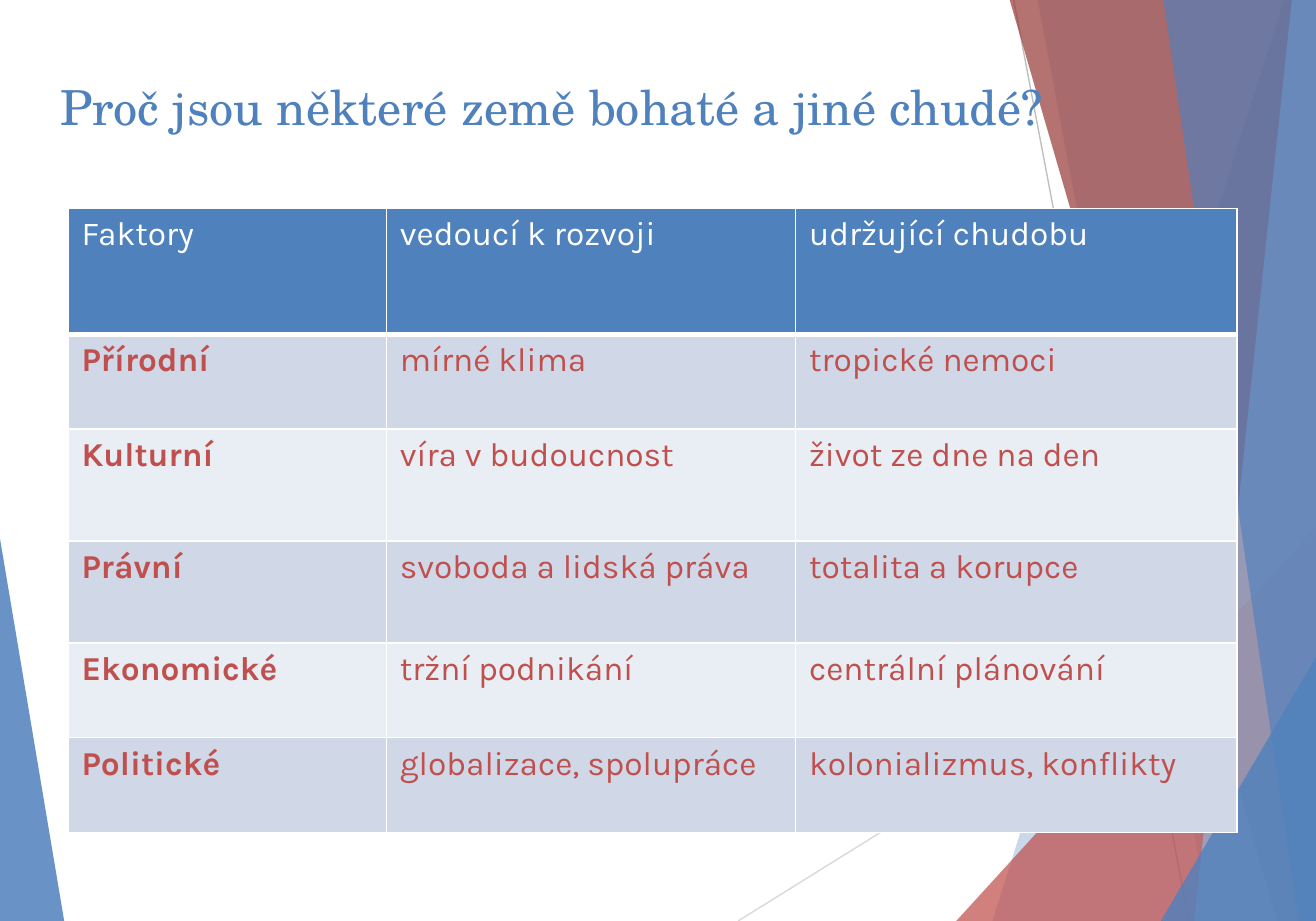
from lxml import etree
from pptx import Presentation
from pptx import util as u
from pptx.dml.color import RGBColor
from pptx.enum import shapes, text
from pptx.oxml.ns import qn

WIDTH, HEIGHT = 9.84, 6.89
BLUE, RED, WHITE = "4F81BD", "C0504D", "FFFFFF"
BODY_FILLS = ["D0D8E8", "E9EDF4"]

RAYS = [("D9D9D9", (5.52, HEIGHT), (WIDTH, 4.2)),
        ("BFBFBF", (7.58, 0), (8.89, HEIGHT))]
LEFT_FACET = (BLUE, 85, [(0, 4.03), (0.48, HEIGHT), (0, HEIGHT)])
RIGHT_FACETS = [
    (BLUE, 30, 9.6, 7.42),
    (BLUE, 20, 7.76, 9.05),
    (RED, 72, (WIDTH, 3.94), 7.15),
    ("953735", 70, 7.55, 9.55),
    ("95B3D7", 70, 9.66, 8.93),
    (BLUE, 65, 8.7, 9.71),
    (BLUE, 80, (WIDTH, 4.92), 8.68),
]

COLUMN_WIDTHS = [2.38, 3.06, 3.3]
ROW_HEIGHTS = [0.94, 0.71, 0.84, 0.76, 0.71, 0.71]
FACTORS = [
    ("Faktory", "vedoucí k rozvoji", "udržující chudobu"),
    ("Přírodní", "mírné klima", "tropické nemoci"),
    ("Kulturní", "víra v budoucnost", "život ze dne na den"),
    ("Právní", "svoboda a lidská práva", "totalita a korupce"),
    ("Ekonomické", "tržní podnikání", "centrální plánování"),
    ("Politické", "globalizace, spolupráce", "kolonializmus, konflikty"),
]


def color(value):
    return RGBColor.from_string(value)


def set_attributes(target, values):
    for name, value in values.items():
        setattr(target, name, value)


def paint(fill, value):
    fill.solid()
    fill.fore_color.rgb = color(value)


def write(frame, words, font_color, **font_values):
    paragraph = frame.paragraphs[0]
    paragraph.alignment = text.PP_ALIGN.LEFT
    run = paragraph.add_run()
    run.text = words
    set_attributes(run.font, font_values)
    run.font.color.rgb = color(font_color)


def add_ray(slide, line_color, start, end):
    points = [u.Inches(value) for value in start + end]
    ray = slide.shapes.add_connector(shapes.MSO_CONNECTOR.STRAIGHT, *points)
    ray.line.color.rgb = color(line_color)
    ray.line.width = u.Pt(0.75)
    etree.SubElement(ray.element.spPr, qn("a:effectLst"))


def add_facet(slide, fill_color, opacity, points):
    corners = [(u.Inches(x), u.Inches(y)) for x, y in points]
    builder = slide.shapes.build_freeform(*corners[0])
    builder.add_line_segments(corners[1:])
    facet = builder.convert_to_shape()
    facet.shadow.inherit = False
    facet.line.fill.background()
    paint(facet.fill, fill_color)
    tint = facet.element.spPr.find(qn("a:solidFill"))[0]
    etree.SubElement(tint, qn("a:alpha"), val=str(opacity * 1000))


def add_right_facet(slide, fill_color, opacity, top, bottom_x):
    if isinstance(top, tuple):
        points = [top]
    else:
        points = [(WIDTH, 0), (top, 0)]
    points += [(bottom_x, HEIGHT), (WIDTH, HEIGHT)]
    add_facet(slide, fill_color, opacity, points)


def add_title(slide, words):
    title = slide.shapes.title
    slide.shapes.element.append(title.element)
    set_attributes(title, {
        "left": u.Inches(0.35), "top": u.Inches(0.53),
        "width": u.Inches(9.14), "height": u.Inches(0.53)})
    set_attributes(title.text_frame, {
        "word_wrap": True, "auto_size": text.MSO_AUTO_SIZE.NONE,
        "vertical_anchor": text.MSO_ANCHOR.MIDDLE})
    write(title.text_frame, words, BLUE, name="TeX Gyre Schola", size=u.Pt(26))


def add_borders(cell, widths):
    properties = cell._tc.get_or_add_tcPr()
    for index, (side, width) in enumerate(widths.items()):
        border = etree.Element(qn(f"a:ln{side}"), w=str(u.Pt(width)))
        fill = etree.SubElement(border, qn("a:solidFill"))
        etree.SubElement(fill, qn("a:srgbClr"), val=WHITE)
        properties.insert(index, border)


def format_cell(cell, words, row, column):
    header = row == 0
    paint(cell.fill, BLUE if header else BODY_FILLS[(row - 1) % 2])
    add_borders(cell, {"L": 1, "R": 1, "T": 3 if row == 1 else 1,
                       "B": 3 if header else 1})
    write(cell.text_frame, words, WHITE if header else RED, name="Karla",
          size=u.Pt(18), bold=column == 0 and not header)


def add_factor_table(slide):
    table = slide.shapes.add_table(
        len(FACTORS), len(COLUMN_WIDTHS), u.Inches(0.51), u.Inches(1.56),
        u.Inches(sum(COLUMN_WIDTHS)), u.Inches(sum(ROW_HEIGHTS))).table
    for column, width in zip(table.columns, COLUMN_WIDTHS):
        column.width = u.Inches(width)
    for row, height in zip(table.rows, ROW_HEIGHTS):
        row.height = u.Inches(height)
    for row, factor in enumerate(FACTORS):
        for column, words in enumerate(factor):
            format_cell(table.cell(row, column), words, row, column)


def main():
    presentation = Presentation()
    presentation.slide_width = u.Inches(WIDTH)
    presentation.slide_height = u.Inches(HEIGHT)
    slide = presentation.slides.add_slide(presentation.slide_layouts[5])
    add_facet(slide, *LEFT_FACET)
    for ray in RAYS:
        add_ray(slide, *ray)
    for facet in RIGHT_FACETS:
        add_right_facet(slide, *facet)
    add_title(slide, "Proč jsou některé země bohaté a jiné chudé?")
    add_factor_table(slide)
    presentation.save("out.pptx")


if __name__ == "__main__":
    main()
